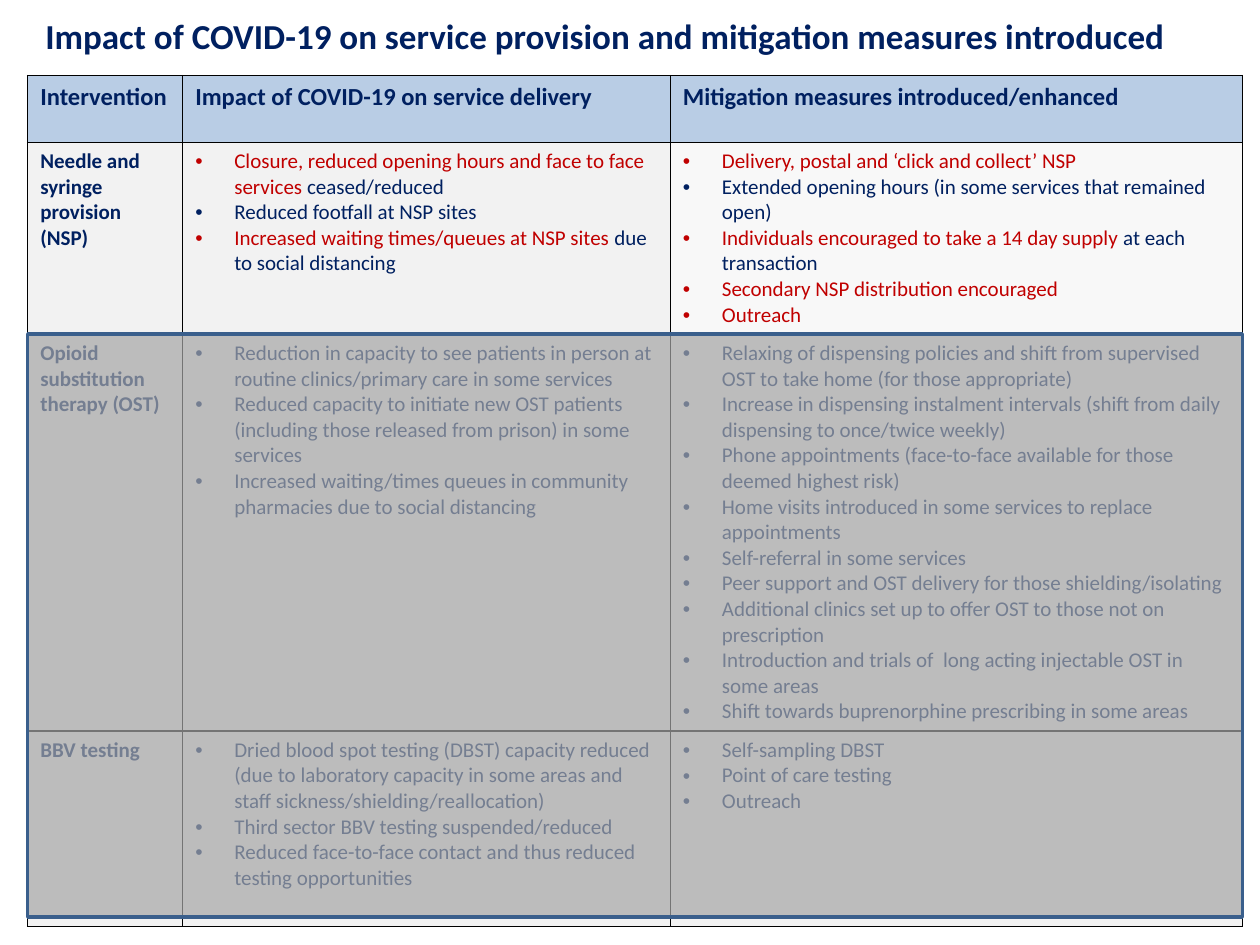
from lxml.etree import SubElement
from pptx import Presentation
from pptx.dml.color import RGBColor
from pptx.enum.shapes import MSO_SHAPE
from pptx.enum.text import MSO_ANCHOR, MSO_AUTO_SIZE, PP_ALIGN
from pptx.oxml.ns import qn
from pptx.util import Inches, Pt

NAVY = RGBColor(0x00, 0x20, 0x60)
RED = RGBColor(0xC0, 0x00, 0x00)
BLACK = RGBColor(0x00, 0x00, 0x00)
HEADER_BLUE = RGBColor(0xB9, 0xCD, 0xE5)
PALE_GREY = RGBColor(0xF2, 0xF2, 0xF2)
VEIL_GREY = RGBColor(0xA6, 0xA6, 0xA6)
OUTLINE_BLUE = RGBColor(0x3A, 0x5F, 0x8C)

TITLE = "Impact of COVID-19 on service provision and mitigation measures introduced"
HEADERS = ("Intervention", "Impact of COVID-19 on service delivery",
           "Mitigation measures introduced/enhanced")

# A bullet is plain text, or a pair: highlighted text and the plain text after it.
INTERVENTIONS = (
    ("Needle and syringe provision (NSP)",
     (("Closure, reduced opening hours and face to face services", " ceased/reduced"),
      "Reduced footfall at NSP sites",
      ("Increased waiting times/queues at NSP sites ", "due to social distancing")),
     (("Delivery, postal and ‘click and collect’ NSP", ""),
      "Extended opening hours (in some services that remained open)",
      ("Individuals encouraged to take a 14 day supply ", "at each transaction"),
      ("Secondary NSP distribution encouraged", ""),
      ("Outreach", ""))),
    ("Opioid substitution therapy (OST)",
     ("Reduction in capacity to see patients in person at routine clinics/primary care "
      "in some services",
      "Reduced capacity to initiate new OST patients (including those released from "
      "prison) in some services",
      "Increased waiting/times queues in community pharmacies due to social distancing"),
     ("Relaxing of dispensing policies and shift from supervised OST to take home "
      "(for those appropriate)",
      "Increase in dispensing instalment intervals (shift from daily dispensing to "
      "once/twice weekly)",
      "Phone appointments (face-to-face available for those deemed highest risk)",
      "Home visits introduced in some services to replace appointments",
      "Self-referral in some services",
      "Peer support and OST delivery for those shielding/isolating",
      "Additional clinics set up to offer OST to those not on prescription",
      "Introduction and trials of  long acting injectable OST in some areas",
      "Shift towards buprenorphine prescribing in some areas")),
    ("BBV testing",
     ("Dried blood spot testing (DBST) capacity reduced (due to laboratory capacity in "
      "some areas and staff sickness/shielding/reallocation)",
      "Third sector BBV testing suspended/reduced",
      "Reduced face-to-face contact and thus reduced testing opportunities"),
     ("Self-sampling DBST", "Point of care testing", "Outreach")),
)

SLIDE_WIDTH, SLIDE_HEIGHT = 10, 7.5
TABLE_LEFT, TABLE_TOP = 0.22, 0.6
COLUMN_WIDTHS = (1.23, 3.87, 4.54)
ROW_HEIGHTS = (0.53, 1.52, 3.15, 1.55)
VEIL_TOP = TABLE_TOP + sum(ROW_HEIGHTS[:2])
VEIL_HEIGHT = 4.63


def add_text(paragraph, text, size=12, color=NAVY, bold=False, font="Calibri"):
    run = paragraph.add_run()
    run.text = text
    run.font.name = font
    run.font.size = Pt(size)
    run.font.bold = bold
    run.font.color.rgb = color


def add_bullet(paragraph, indent=0.31):
    properties = paragraph._p.get_or_add_pPr()
    properties.set("marL", str(Inches(indent)))
    properties.set("indent", str(-Inches(indent)))
    SubElement(properties, qn("a:buFont"), typeface="Arial")
    SubElement(properties, qn("a:buChar"), char="•")


def set_opacity(fill_parent, percent):
    color = fill_parent.find(qn("a:solidFill"))[0]
    SubElement(color, qn("a:alpha"), val=str(percent * 1000))


def add_borders(cell, color=BLACK, width=1):
    properties = cell._tc.get_or_add_tcPr()
    for side in ("lnL", "lnR", "lnT", "lnB"):
        border = SubElement(properties, qn(f"a:{side}"), w=str(Pt(width)))
        fill = SubElement(border, qn("a:solidFill"))
        SubElement(fill, qn("a:srgbClr"), val=str(color))


class ImpactSlide:
    def __init__(self, presentation):
        self.slide = presentation.slides.add_slide(presentation.slide_layouts[5])

    def title(self, text, left, top, width, height):
        heading = self.slide.shapes.title
        heading.left, heading.top = Inches(left), Inches(top)
        heading.width, heading.height = Inches(width), Inches(height)
        frame = heading.text_frame
        frame.word_wrap = True
        frame.auto_size = MSO_AUTO_SIZE.NONE
        frame.vertical_anchor = MSO_ANCHOR.MIDDLE
        frame.paragraphs[0].alignment = PP_ALIGN.LEFT
        add_text(frame.paragraphs[0], text, size=20, bold=True)

    def table(self, headers, interventions):
        grid = self.slide.shapes.add_table(
            len(ROW_HEIGHTS), len(COLUMN_WIDTHS), Inches(TABLE_LEFT), Inches(TABLE_TOP),
            Inches(sum(COLUMN_WIDTHS)), Inches(sum(ROW_HEIGHTS))).table
        for column, width in zip(grid.columns, COLUMN_WIDTHS):
            column.width = Inches(width)
        for row, height in zip(grid.rows, ROW_HEIGHTS):
            row.height = Inches(height)
        for column, header in enumerate(headers):
            self.label_cell(grid.cell(0, column), header, HEADER_BLUE, size=14)
        for row, (name, *bullet_lists) in enumerate(interventions, start=1):
            self.label_cell(grid.cell(row, 0), name, PALE_GREY)
            for column, bullets in enumerate(bullet_lists, start=1):
                self.bullet_cell(grid.cell(row, column), bullets)
        set_opacity(grid.cell(1, 2)._tc.tcPr, 52)

    def style_cell(self, cell, fill):
        add_borders(cell)
        cell.fill.solid()
        cell.fill.fore_color.rgb = fill

    def label_cell(self, cell, text, fill, size=12):
        self.style_cell(cell, fill)
        add_text(cell.text_frame.paragraphs[0], text, size=size, bold=True)

    def bullet_cell(self, cell, bullets):
        self.style_cell(cell, PALE_GREY)
        frame = cell.text_frame
        for index, bullet in enumerate(bullets):
            paragraph = frame.add_paragraph() if index else frame.paragraphs[0]
            add_bullet(paragraph)
            highlight, plain = ("", bullet) if isinstance(bullet, str) else bullet
            for text, color in ((highlight, RED), (plain, NAVY)):
                if text:
                    add_text(paragraph, text, color=color)

    def veil(self, left, top, width, height):
        """Dim the rows that are not being discussed."""
        cover = self.slide.shapes.add_shape(
            MSO_SHAPE.RECTANGLE, Inches(left), Inches(top), Inches(width), Inches(height))
        cover.shadow.inherit = False
        cover.fill.solid()
        cover.fill.fore_color.rgb = VEIL_GREY
        set_opacity(cover._element.spPr, 70)
        cover.line.color.rgb = OUTLINE_BLUE
        cover.line.width = Pt(2)


def main():
    presentation = Presentation()
    presentation.slide_width = Inches(SLIDE_WIDTH)
    presentation.slide_height = Inches(SLIDE_HEIGHT)
    impact = ImpactSlide(presentation)
    impact.title(TITLE, 0.26, 0.05, 9.61, 0.47)
    impact.table(HEADERS, INTERVENTIONS)
    impact.veil(TABLE_LEFT, VEIL_TOP, sum(COLUMN_WIDTHS), VEIL_HEIGHT)
    presentation.save("out.pptx")


if __name__ == "__main__":
    main()
